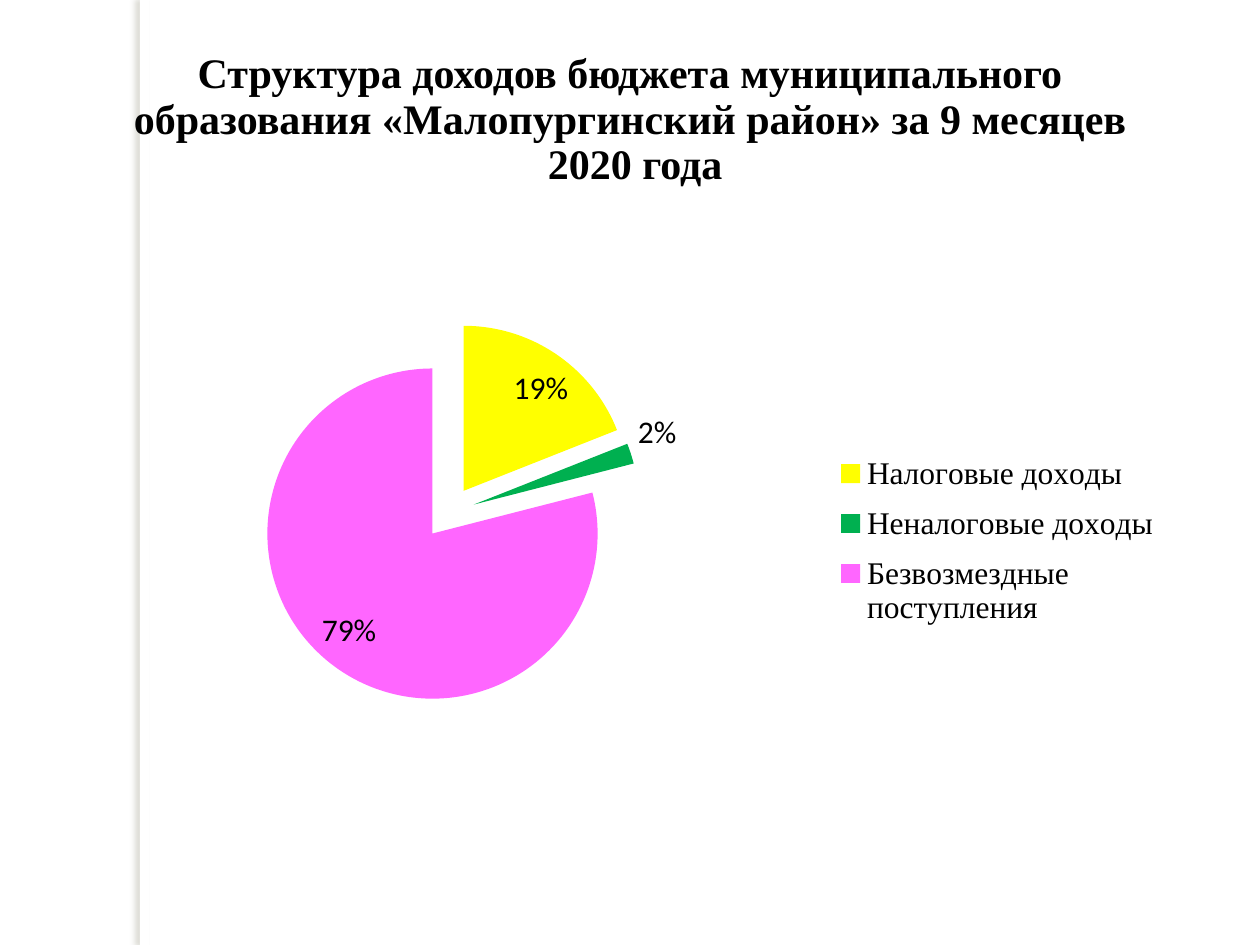
from lxml import etree
from pptx import Presentation
from pptx import util as u
from pptx.chart import data as cd
from pptx.dml.color import RGBColor
from pptx.enum import chart as ch, shapes, text
from pptx.oxml import parse_xml
from pptx.oxml.ns import nsdecls, qn


def tint(fill, hue):
    fill.solid()
    fill.fore_color.rgb = RGBColor.from_string(hue)


def write(frame, words, font="Times New Roman", size=24, hue="000000", bold=True):
    frame.text = words
    frame.word_wrap = True
    frame.vertical_anchor = text.MSO_ANCHOR.MIDDLE
    for par in frame.paragraphs:
        par.alignment = text.PP_ALIGN.CENTER
        par.line_spacing = 0.9
        for run in par.runs:
            run.font.name, run.font.size, run.font.bold = font, u.Pt(size), bold
            tint(run.font.fill, hue)


deck = Presentation()
deck.slide_width, deck.slide_height = u.Cm(25.4), u.Cm(19.05)
slide = deck.slides.add_slide(deck.slide_layouts[5])

# White strip with a soft shadow to its left, behind everything
strip = slide.shapes.add_shape(shapes.MSO_SHAPE.RECTANGLE,
                               u.Cm(2.82), 0, u.Cm(0.2), u.Cm(19.05))
tint(strip.fill, "FFFFFF")
strip.line.fill.background()
strip._element.spPr.append(parse_xml(
    f'<a:effectLst {nsdecls("a")}>'
    '<a:outerShdw blurRad="38100" dist="38100" dir="10800000" algn="r" rotWithShape="0">'
    '<a:srgbClr val="7F7D63"><a:alpha val="25000"/></a:srgbClr>'
    '</a:outerShdw></a:effectLst>'))
slide.shapes._spTree.insert(2, strip._element)

# Title
title = slide.shapes.title
title.left, title.top = u.Cm(1.27), u.Cm(0.84)
title.width, title.height = u.Cm(22.86), u.Cm(3.18)
write(title.text_frame, "Структура доходов бюджета муниципального образования "
      "«Малопургинский район» за 9 месяцев\v 2020 года")

# Pie of income shares
parts = [("Налоговые доходы", 19, "FFFF00"),
         ("Неналоговые доходы", 2, "00B050"),
         ("Безвозмездные поступления", 79, "FF66FF")]
data = cd.CategoryChartData()
data.categories = [name for name, share, hue in parts]
data.add_series("Series 1", [share for name, share, hue in parts])
chart = slide.shapes.add_chart(ch.XL_CHART_TYPE.PIE, u.Cm(1.07), u.Cm(4.24),
                               u.Cm(22.66), u.Cm(12.22), data).chart
chart.has_title = False
chart.font.name, chart.font.size = "Calibri", u.Pt(18)
tint(chart.font.fill, "000000")

# Slices, pulled apart
plot = chart.plots[0]
plot.vary_by_categories = True
pie = plot.series[0]
for i, (name, share, hue) in enumerate(parts):
    tint(pie.points[i].format.fill, hue)
burst = etree.Element(qn("c:explosion"), val="16")
pie._element.find(qn("c:dPt")).addprevious(burst)

# Percent labels
plot.has_data_labels = True
tags = plot.data_labels
tags.show_value, tags.show_percentage = False, True
tags.number_format, tags.number_format_is_linked = "0%", False
tags.position = ch.XL_LABEL_POSITION.BEST_FIT

# Legend
chart.has_legend = True
key = chart.legend
key.position = ch.XL_LEGEND_POSITION.RIGHT
key.include_in_layout = False
key.font.name, key.font.size = "Times New Roman", u.Pt(18)
tint(key.font.fill, "000000")

# Fixed places of the pie and the legend, as shares of the chart
area = chart._chartSpace.chart.plotArea
for old in area.findall(qn("c:layout")):
    area.remove(old)
spots = [(area, 0, '<c:layoutTarget val="inner"/>', (0.122, 0.183, 0.46, 0.632)),
         (key._element, 1, "", (0.69, 0.38, 0.3, 0.33))]
for host, at, aim, box in spots:
    for old in host.findall(qn("c:layout")):
        host.remove(old)
    sizes = "".join(f'<c:{k} val="{v}"/>' for k, v in zip("xywh", box))
    host.insert(at, parse_xml(
        f'<c:layout {nsdecls("c")}><c:manualLayout>{aim}'
        f'<c:xMode val="edge"/><c:yMode val="edge"/>{sizes}</c:manualLayout></c:layout>'))

deck.save("out.pptx")
